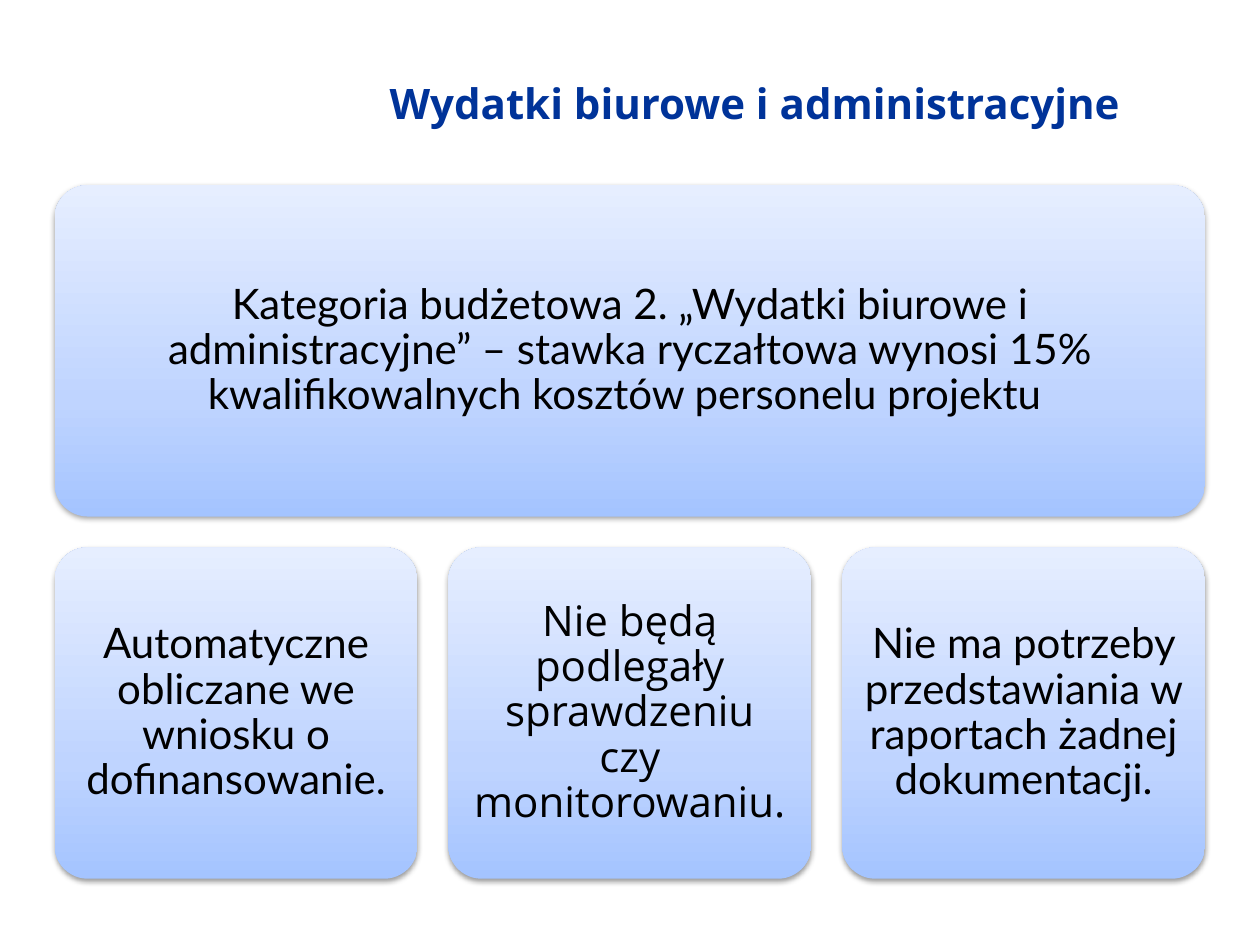
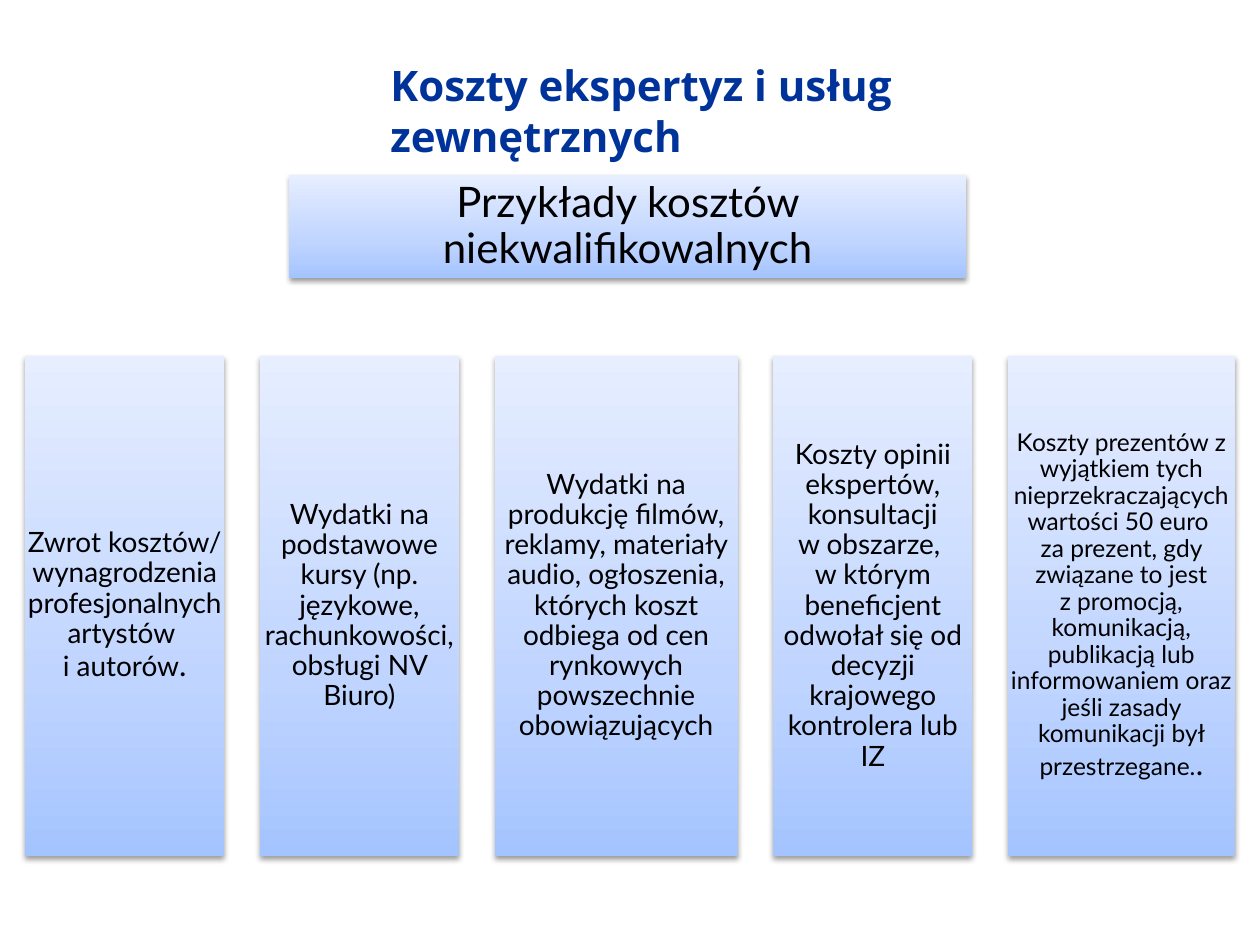
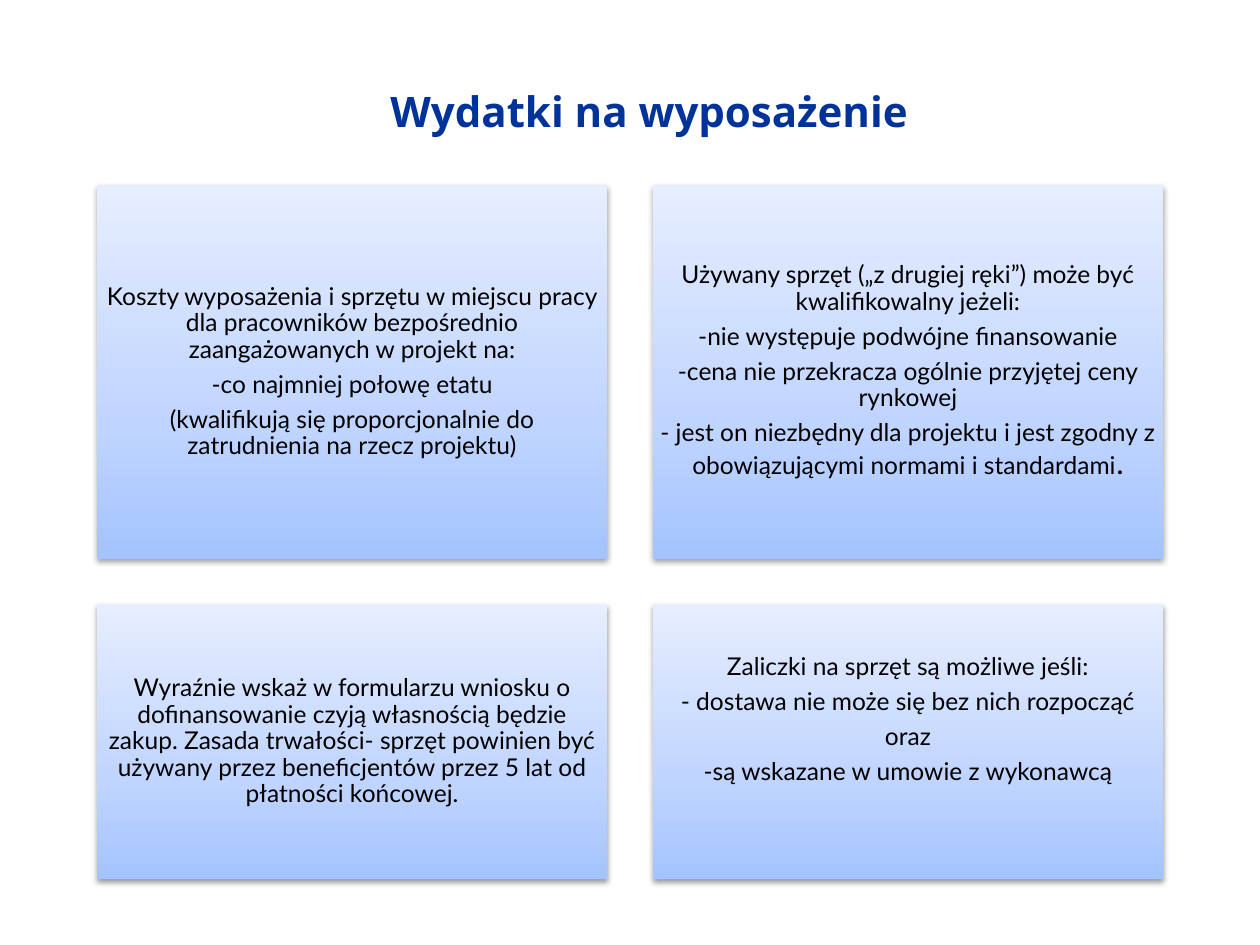
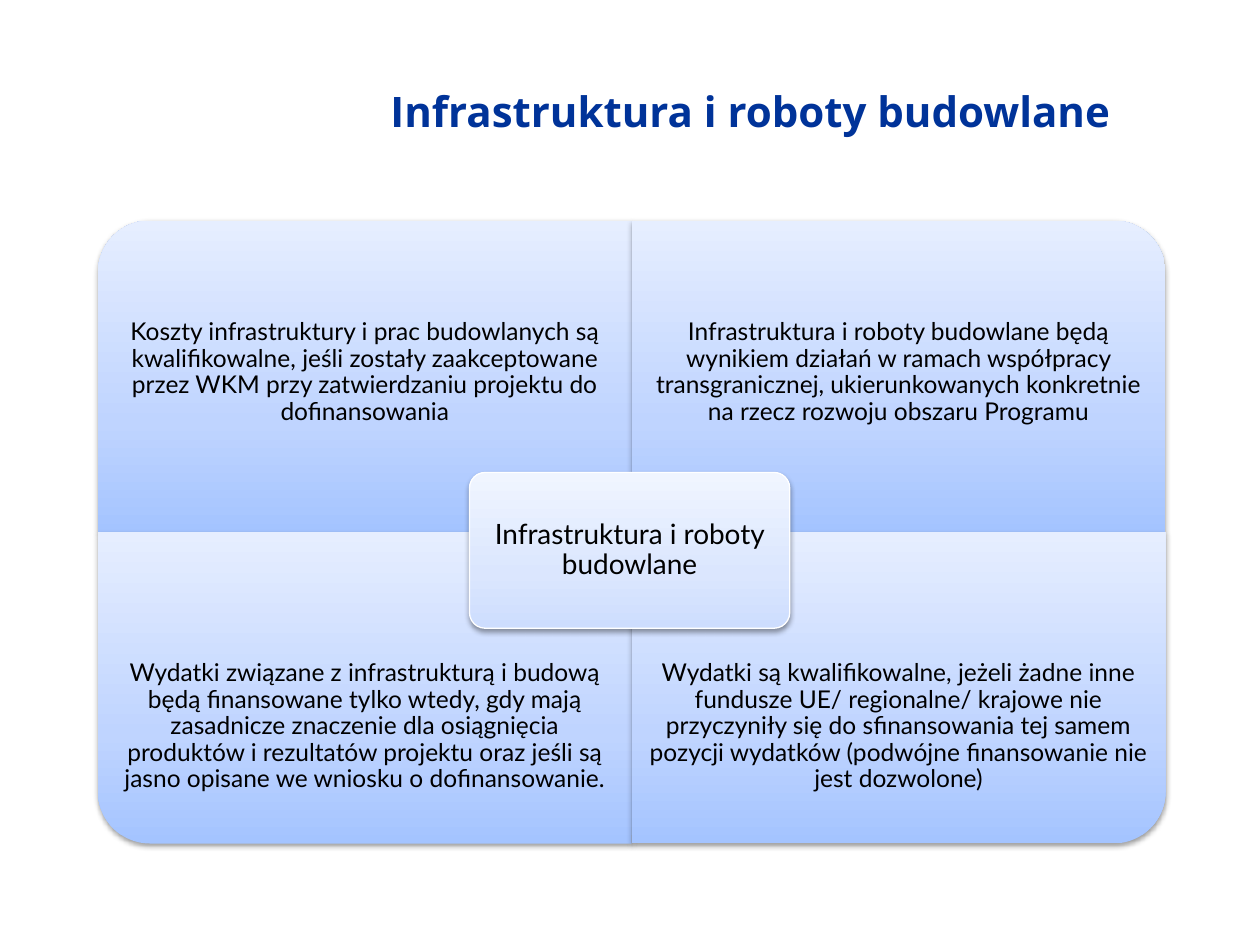
from lxml import etree
from pptx import Presentation
from pptx.dml.color import RGBColor
from pptx.enum.shapes import MSO_SHAPE
from pptx.enum.text import MSO_ANCHOR, PP_ALIGN
from pptx.oxml.ns import qn
from pptx.util import Pt

RECT = MSO_SHAPE.RECTANGLE
ROUNDED = MSO_SHAPE.ROUNDED_RECTANGLE
ONE_ROUND = MSO_SHAPE.ROUND_1_RECTANGLE
MIDDLE = MSO_ANCHOR.MIDDLE
LEFT, CENTER = PP_ALIGN.LEFT, PP_ALIGN.CENTER

TITLE_COLOR, TEXT_COLOR, WHITE = "003399", "000000", "FFFFFF"
BLUE = ((0, "A4C4FF"), (35, "BFD4FF"), (100, "E6EEFF"))
PALE = ((0, "CDDDFE"), (35, "DBE6FE"), (100, "F0F5FF"))
BODY_FONT, TITLE_FONT = "Lato", "Open Sans"


def rgb(value):
    return RGBColor.from_string(value)


def add_xml(parent, tag, **attrs):
    return etree.SubElement(parent, qn(tag), {k: str(v) for k, v in attrs.items()})


class Deck:
    def __init__(self):
        self.prs = Presentation()
        self.prs.slide_width, self.prs.slide_height = Pt(720), Pt(540)
        self.s = None

    def slide(self, title, x=216, y=36, w=450, align=LEFT):
        self.s = self.prs.slides.add_slide(self.prs.slide_layouts[6])
        tb = self.s.shapes.add_textbox(Pt(x), Pt(y), Pt(w), Pt(54))
        tf = tb.text_frame
        tf.word_wrap = True
        tf.vertical_anchor = MIDDLE
        tf.text = title
        p = tf.paragraphs[0]
        p.alignment = align
        self.style_run(p.runs[0], 24, TITLE_FONT, TITLE_COLOR, True)

    def style_run(self, r, size, font=BODY_FONT, color=TEXT_COLOR, bold=False):
        r.font.size = Pt(size)
        r.font.name = font
        r.font.color.rgb = rgb(color)
        r.font.bold = bold

    def set_text(self, sp, text, size, inset, font=BODY_FONT, large_dot=False,
                 extra_top=0, extra_bottom=0):
        """Fill sp with centred text; large_dot ends it with an 18 pt full stop."""
        tf = sp.text_frame
        tf.word_wrap = True
        tf.vertical_anchor = MIDDLE
        tf.margin_left = tf.margin_right = Pt(inset)
        tf.margin_top = Pt(inset + extra_top)
        tf.margin_bottom = Pt(inset + extra_bottom)
        tf.text = text
        for p in tf.paragraphs:
            p.alignment = CENTER
            p.line_spacing = 0.9
            p.space_after = Pt(0.35 * size)
            for r in p.runs:
                self.style_run(r, size, font)
            for br in p._p.findall(qn("a:br")):
                add_xml(br, "a:rPr", sz=size * 100)
        if large_dot:
            r = tf.paragraphs[-1].add_run()
            r.text = "."
            self.style_run(r, 18, font)

    def panel(self, kind, x, y, w, h, stops=BLUE, rotation=0, border=None):
        """Add a shaded shape that covers the given area after its rotation."""
        if rotation % 180:
            x, y, w, h = x + (w - h) / 2, y + (h - w) / 2, h, w
        sp = self.s.shapes.add_shape(kind, Pt(x), Pt(y), Pt(w), Pt(h))
        sp.rotation = rotation
        if kind == ROUNDED:
            sp.adjustments[0] = 0.1
        if border:
            sp.line.color.rgb = rgb(border)
            sp.line.width = Pt(0.75)
        else:
            sp.line.fill.background()
        self.shade(sp, stops)
        self.add_shadow(sp)
        return sp

    def shade(self, sp, stops):
        sp.fill.gradient()
        sp.fill.gradient_angle = 90
        grad = sp._element.spPr.find(qn("a:gradFill"))
        grad.set("rotWithShape", "0")
        gs_list = grad.find(qn("a:gsLst"))
        for gs in list(gs_list):
            gs_list.remove(gs)
        for position, color in stops:
            gs = add_xml(gs_list, "a:gs", pos=position * 1000)
            add_xml(gs, "a:srgbClr", val=color)

    def add_shadow(self, sp):
        sp.shadow.inherit = False
        effects = sp._element.spPr.find(qn("a:effectLst"))
        shadow = add_xml(effects, "a:outerShdw", blurRad=Pt(3.15), dist=Pt(1.6),
                         dir=5400000, rotWithShape=0)
        color = add_xml(shadow, "a:srgbClr", val="000000")
        add_xml(color, "a:alpha", val=38000)

    def card(self, kind, box, text, size, inset, stops=BLUE, border=None, **text_style):
        sp = self.panel(kind, *box, stops=stops, border=border)
        self.set_text(sp, text, size, inset, **text_style)

    def caption(self, box, text, size, inset, **text_style):
        tb = self.s.shapes.add_textbox(*(Pt(v) for v in box))
        self.set_text(tb, text, size, inset, **text_style)


def office_costs(deck):
    deck.slide("Wydatki biurowe i administracyjne", 179.28, 31.68, 504, CENTER)
    left, width, height, pitch = 31.2, 207.36, 189.36, 225
    deck.card(ROUNDED, (left, 105.84, 2 * pitch + width, height),
              "Kategoria budżetowa 2. „Wydatki biurowe i administracyjne” – stawka "
              "ryczałtowa wynosi 15% kwalifikowalnych kosztów personelu projektu ",
              24, 7.2)
    benefits = (
        ("Automatyczne obliczane we wniosku o dofinansowanie.", BODY_FONT),
        ("Nie będą podlegały sprawdzeniu czy monitorowaniu.", TITLE_FONT),
        ("Nie ma potrzeby przedstawiania w raportach żadnej dokumentacji.", BODY_FONT),
    )
    for i, (text, font) in enumerate(benefits):
        deck.card(ROUNDED, (left + i * pitch, 312.8, width, height), text, 24, 7.2,
                  font=font)


def external_services(deck):
    deck.slide("Koszty ekspertyz i usług zewnętrznych")
    deck.card(RECT, (164.88, 100.08, 387.36, 59.04),
              "Przykłady kosztów niekwalifikowalnych", 24, 1.2)
    columns = (
        (113.76, 16, True,
         "Zwrot kosztów/ wynagrodzenia profesjonalnych artystów \vi autorów"),
        (113.76, 16, False,
         "Wydatki na podstawowe kursy (np. językowe, rachunkowości, "
         "obsługi NV Biuro)"),
        (138.96, 16, False,
         "Wydatki na produkcję filmów, reklamy, materiały audio, ogłoszenia, "
         "których koszt odbiega od cen rynkowych powszechnie obowiązujących"),
        (113.76, 16, False,
         "Koszty opinii ekspertów, konsultacji\vw obszarze, \vw którym beneficjent "
         "odwołał się od decyzji krajowego kontrolera lub IZ"),
        (129.6, 14, True,
         "Koszty prezentów z wyjątkiem tych nieprzekraczających wartości 50 euro "
         "\vza prezent, gdy związane to jest\vz promocją, komunikacją, publikacją "
         "lub informowaniem oraz jeśli zasady komunikacji był przestrzegane."),
    )
    x, right = 14.4, 705.6
    gap = (right - x - sum(column[0] for column in columns)) / (len(columns) - 1)
    for width, size, large_dot, text in columns:
        deck.card(RECT, (x, 203.4, width, 285.84), text, size, 0.72,
                  large_dot=large_dot)
        x += width + gap


def equipment(deck):
    deck.slide("Wydatki na wyposażenie")
    rows = ((105.84, 213.4), (345.4, 157))
    cells = (
        ("Koszty wyposażenia i sprzętu w miejscu pracy dla pracowników bezpośrednio "
         "zaangażowanych w projekt na:\n-co najmniej połowę etatu\n"
         "(kwalifikują się proporcjonalnie do zatrudnienia na rzecz projektu)", {}),
        ("Używany sprzęt („z drugiej ręki”) może być kwalifikowalny jeżeli:\n"
         "-nie występuje podwójne finansowanie\n"
         "-cena nie przekracza ogólnie przyjętej ceny rynkowej\n"
         "- jest on niezbędny dla projektu i jest zgodny z obowiązującymi normami "
         "i standardami", {"large_dot": True}),
        ("Wyraźnie wskaż w formularzu wniosku o dofinansowanie czyją własnością "
         "będzie zakup. Zasada trwałości- sprzęt powinien być używany przez "
         "beneficjentów przez 5 lat od płatności końcowej.", {}),
        ("Zaliczki na sprzęt są możliwe jeśli:\n"
         "- dostawa nie może się bez nich rozpocząć\noraz\n"
         "-są wskazane w umowie z wykonawcą", {"extra_bottom": 25}),
    )
    for i, (text, style) in enumerate(cells):
        row, col = divmod(i, 2)
        y, height = rows[row]
        deck.card(RECT, (55.44 + col * 317.6, y, 291.6, height), text, 14, 4.2, **style)


def infrastructure(deck):
    deck.slide("Infrastruktura i roboty budowlane")
    left, top, width, height, text_height = 56, 126, 305, 178, 133.6
    quarters = (
        (270, "Koszty infrastruktury i prac budowlanych są kwalifikowalne, jeśli "
              "zostały zaakceptowane przez WKM przy zatwierdzaniu projektu do "
              "dofinansowania"),
        (0, "Infrastruktura i roboty budowlane będą wynikiem działań w ramach "
            "współpracy transgranicznej, ukierunkowanych konkretnie na rzecz rozwoju "
            "obszaru Programu"),
        (180, "Wydatki związane z infrastrukturą i budową będą finansowane tylko "
              "wtedy, gdy mają zasadnicze znaczenie dla osiągnięcia produktów i "
              "rezultatów projektu oraz jeśli są jasno opisane we wniosku o "
              "dofinansowanie."),
        (90, "Wydatki są kwalifikowalne, jeżeli żadne inne fundusze UE/ regionalne/ "
             "krajowe nie przyczyniły się do sfinansowania tej samem pozycji wydatków "
             "(podwójne finansowanie nie jest dozwolone)"),
    )
    for i, (rotation, text) in enumerate(quarters):
        row, col = divmod(i, 2)
        x, y = left + col * width, top + row * height
        deck.panel(ONE_ROUND, x, y, width, height, rotation=rotation)
        text_y = y + row * (height - text_height)
        deck.caption((x, text_y, width, text_height), text, 14, 7.9,
                     extra_top=0 if row else 40)
    deck.card(ROUNDED, (268.3, 270, 183, 89), "Infrastruktura i roboty budowlane",
              16, 4.8, stops=PALE, border=WHITE)


def main():
    deck = Deck()
    office_costs(deck)
    external_services(deck)
    equipment(deck)
    infrastructure(deck)
    deck.prs.save("out.pptx")


if __name__ == "__main__":
    main()
